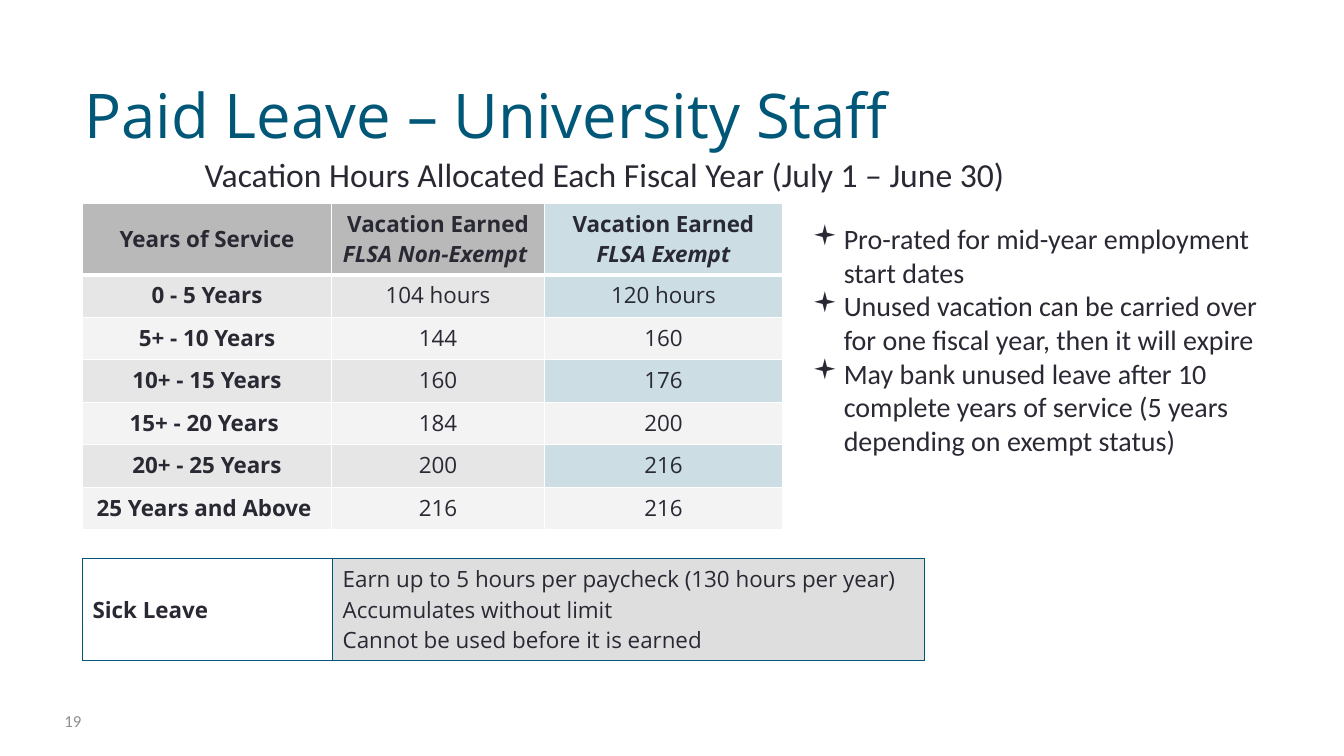
from lxml import etree
from pptx import Presentation
from pptx.dml.color import RGBColor
from pptx.enum.text import MSO_ANCHOR, PP_ALIGN
from pptx.oxml.ns import qn
from pptx.util import Pt

LEFT, CENTER = PP_ALIGN.LEFT, PP_ALIGN.CENTER
TOP, MIDDLE, BOTTOM = MSO_ANCHOR.TOP, MSO_ANCHOR.MIDDLE, MSO_ANCHOR.BOTTOM

TEAL = RGBColor(0x00, 0x57, 0x77)
INK = RGBColor(0x29, 0x29, 0x34)
MUTED = RGBColor(0x8E, 0x8E, 0x90)
WHITE = RGBColor(0xFF, 0xFF, 0xFF)
HEAD = RGBColor(0xB9, 0xB9, 0xB9)
BLUE = RGBColor(0xCC, 0xDD, 0xE4)
BAND = RGBColor(0xE6, 0xE6, 0xE6)
PALE = RGBColor(0xF3, 0xF3, 0xF3)
GRAY = RGBColor(0xDE, 0xDE, 0xDE)
SANS, BODY = "Open Sans", "Calibri"

# Content
TITLE = "Paid Leave – University Staff"
SUBTITLE = "Vacation Hours Allocated Each Fiscal Year (July 1 – June 30)"
NUMBER = "19"
HEADS = [
    ["Years of Service"],
    ["Vacation Earned", "FLSA Non-Exempt "],
    ["Vacation Earned", "FLSA Exempt"],
]
HOURS = [
    ("0 - 5 Years", "104 hours", "120 hours"),
    ("5+ - 10 Years", "144", "160"),
    ("10+ - 15 Years", "160", "176"),
    ("15+ - 20 Years ", "184", "200"),
    ("20+ - 25 Years", "200", "216"),
    ("25 Years and Above ", "216", "216"),
]
SICK = [
    "Earn up to 5 hours per paycheck (130 hours per year)",
    "Accumulates without limit",
    "Cannot be used before it is earned",
]
NOTES = [
    "Pro-rated for mid-year employment start dates",
    "Unused vacation can be carried over for one fiscal year, then it will expire",
    "May bank unused leave after 10 complete years of service "
    "(5 years depending on exempt status)",
]

deck = Presentation()
deck.slide_width, deck.slide_height = Pt(960), Pt(540)
slide = deck.slides.add_slide(deck.slide_layouts[6])


def write(frame, lines, size, face, color, bold=False, align=LEFT, slant=None, bullet=False):
    """Fill a text frame, one paragraph a line; slant is the italic line."""
    for i, line in enumerate(lines):
        para = frame.paragraphs[0] if i == 0 else frame.add_paragraph()
        para.alignment = align
        if bullet:
            props = para._p.get_or_add_pPr()
            props.set("marL", str(Pt(22.5)))
            props.set("indent", str(-Pt(22.5)))
            etree.SubElement(props, qn("a:buFont"), typeface="Wingdings")
            etree.SubElement(props, qn("a:buChar"), char="▪")
        run = para.add_run()
        run.text = line
        font = run.font
        font.size, font.name, font.color.rgb = Pt(size), face, color
        font.bold, font.italic = bold, i == slant


def add_text(box, lines, size, face, color, anchor=TOP, bullet=False):
    frame = slide.shapes.add_textbox(*map(Pt, box)).text_frame
    frame.word_wrap = True
    frame.vertical_anchor = anchor
    write(frame, lines, size, face, color, bullet=bullet)


def add_grid(left, top, cols, rows):
    frame = slide.shapes.add_table(
        len(rows), len(cols), Pt(left), Pt(top), Pt(sum(cols)), Pt(sum(rows)))
    grid = frame.table
    grid.first_row = grid.horz_banding = False
    for col, width in zip(grid.columns, cols):
        col.width = Pt(width)
    for row, height in zip(grid.rows, rows):
        row.height = Pt(height)
    return grid


def style(cell, fill, edge, anchor=TOP, above=1, below=1):
    """Set borders first, then fill, as the cell schema orders them."""
    props = cell._tc.get_or_add_tcPr()
    for side, width in zip("LRTB", (1, 1, above, below)):
        line = etree.SubElement(props, qn("a:ln" + side), w=str(Pt(width)))
        solid = etree.SubElement(line, qn("a:solidFill"))
        etree.SubElement(solid, qn("a:srgbClr"), val=str(edge))
    if fill is None:
        cell.fill.background()
    else:
        cell.fill.solid()
        cell.fill.fore_color.rgb = fill
    cell.vertical_anchor = anchor


# Title and slide number
add_text((53.3, 21.6, 859.7, 90), [TITLE], 44, SANS, TEAL, BOTTOM)
add_text((38.9, 500.4, 40.3, 28.8), [NUMBER], 12, BODY, MUTED, MIDDLE)

# Sick leave table
sick = add_grid(59, 399.2, [178.6, 422.8], [72.6])
for c, (lines, fill) in enumerate([(["Sick Leave"], None), (SICK, GRAY)]):
    cell = sick.cell(0, c)
    style(cell, fill, TEAL, MIDDLE)
    write(cell.text_frame, lines, 16, SANS, INK, bold=c == 0)

# Vacation table
hours = add_grid(59, 145.4, [177.8, 152.2, 169.9], [50.8] + [30.4] * len(HOURS))
for c, lines in enumerate(HEADS):
    cell = hours.cell(0, c)
    style(cell, BLUE if c == 2 else HEAD, WHITE, TOP if c else MIDDLE, below=3)
    write(cell.text_frame, lines, 16, SANS, INK, True, CENTER, slant=1)
for r, row in enumerate(HOURS, 1):
    for c, value in enumerate(row):
        cell = hours.cell(r, c)
        fill = PALE if r % 2 == 0 else BLUE if c == 2 else BAND
        style(cell, fill, WHITE, above=3 if r == 1 else 1)
        write(cell.text_frame, [value], 16, SANS, INK, c == 0, CENTER)

# Subtitle and notes
add_text((139, 106.6, 591, 36), [SUBTITLE], 24, BODY, INK)
add_text((573.1, 154.8, 352.1, 177.1), NOTES, 20, BODY, INK, bullet=True)

deck.save("out.pptx")
